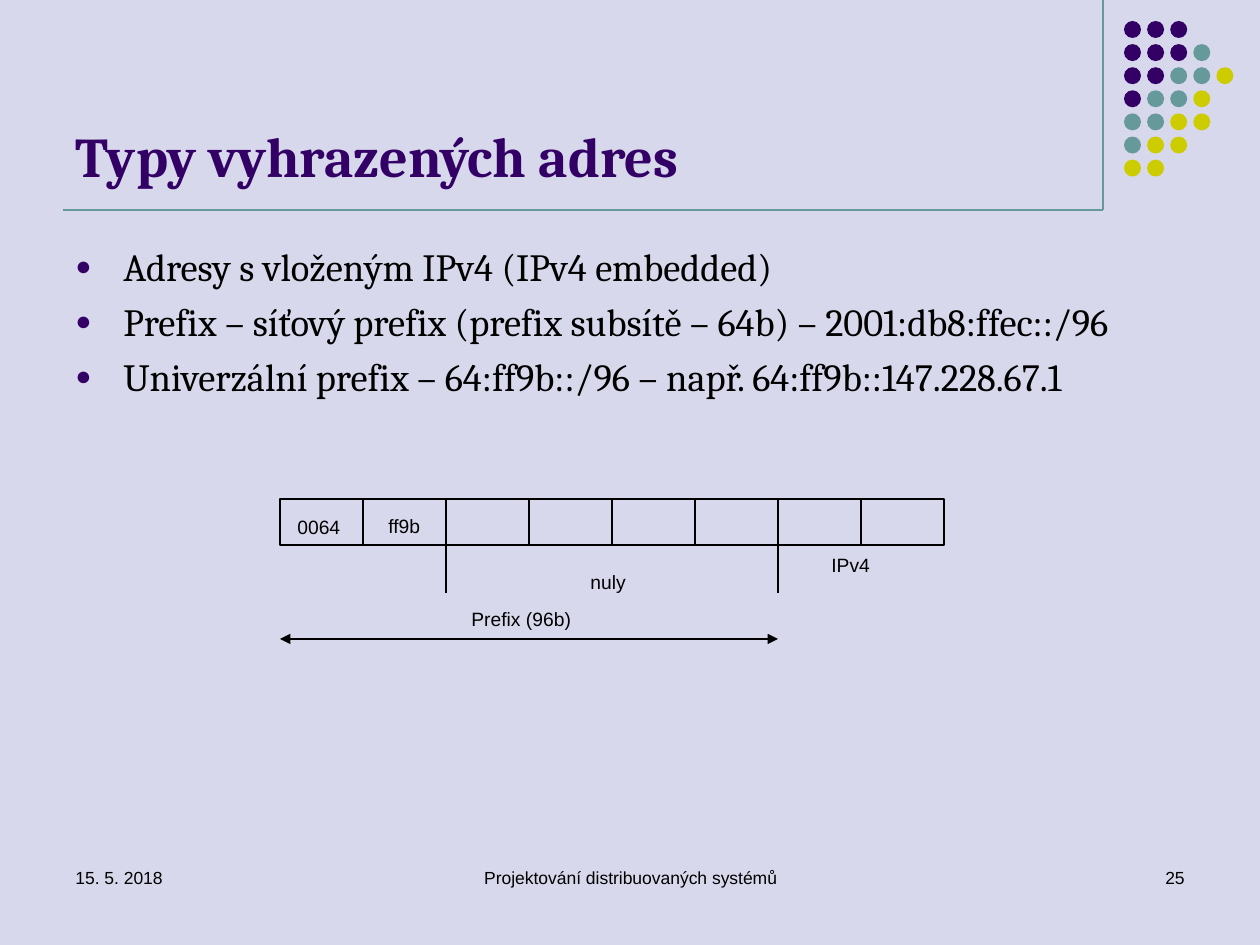
from pptx import Presentation
from pptx.dml.color import RGBColor as Rgb
from pptx.enum.shapes import MSO_CONNECTOR as Connector, MSO_SHAPE as Preset
from pptx.enum.text import MSO_ANCHOR as Anchor, PP_ALIGN as Align
from pptx.oxml import parse_xml
from pptx.oxml.ns import nsdecls
from pptx.util import Pt

EMU_PER_PX = 914400 / 126
COLORS = {
    "background": "D8D8EC",
    "purple": "330066",
    "teal": "669999",
    "yellow": "CCCC00",
    "black": "000000",
}
TITLE = {"name": "Cambria", "size": Pt(32), "bold": True}
BODY = {"name": "Cambria", "size": Pt(22)}
FOOTER = {"name": "Arial", "size": Pt(10)}
LABEL = {"name": "Arial", "size": Pt(11)}
LABEL_PARA = {"line_spacing": 1.07, "space_after": Pt(8)}


def px(value):
    return round(value * EMU_PER_PX)


def color(name):
    return Rgb.from_string(COLORS[name])


def xml(markup):
    return parse_xml(markup.replace("/>", f" {nsdecls('a')}/>", 1))


def add_text(shapes, box, lines, font, ink="black", anchor=Anchor.TOP, **para_format):
    frame = shapes.add_textbox(*map(px, box)).text_frame
    frame.word_wrap = True
    frame.vertical_anchor = anchor
    for index, line in enumerate(lines):
        para = frame.add_paragraph() if index else frame.paragraphs[0]
        for key, value in para_format.items():
            setattr(para, key, value)
        span = para.add_run()
        span.text = line
        for key, value in font.items():
            setattr(span.font, key, value)
        span.font.color.rgb = color(ink)
    return frame


def add_line(shapes, start, end, ink, width):
    line = shapes.add_connector(Connector.STRAIGHT, *map(px, start + end))
    line.line.color.rgb = color(ink)
    line.line.width = Pt(width)
    line._element.spPr.append(xml("<a:effectLst/>"))
    return line


def add_dots(page, box):
    left, top, pitch, size = box
    inks = {"P": "purple", "T": "teal", "Y": "yellow"}
    rows = ["PPP", "PPPT", "PPTTY", "PTTY", "TTYY", "TYY", "YY"]
    shapes = page.shapes.add_group_shape().shapes
    for row, codes in enumerate(rows):
        for column, code in enumerate(codes):
            corner = px(left + column * pitch), px(top + row * pitch)
            dot = shapes.add_shape(Preset.OVAL, *corner, px(size), px(size))
            dot.shadow.inherit = False
            dot.fill.solid()
            dot.fill.fore_color.rgb = color(inks[code])
            dot.line.fill.background()


def add_header(page, box):
    left, top, width, height = box
    right, bottom = left + width, top + height
    add_line(page.shapes, (right, top), (right, bottom), "teal", 0.75)
    add_dots(page, (right + 21, top + 21, 23.1, 17))
    add_line(page.shapes, (left, bottom), (right, bottom), "teal", 0.75)
    add_text(page.shapes, (left, top + 16, width, 179), ["Typy vyhrazených adres"],
             TITLE, "purple", Anchor.BOTTOM)


def add_bullets(page, box):
    lines = [
        "Adresy s\u00a0vloženým IPv4 (IPv4 embedded)".replace("\u00a0", " "),
        "Prefix – síťový prefix (prefix subsítě – 64b) – 2001:db8:ffec::/96",
        "Univerzální prefix – 64:ff9b::/96 – např. 64:ff9b::147.228.67.1",
    ]
    frame = add_text(page.shapes, box, lines, BODY, space_before=Pt(5))
    for para in frame.paragraphs:
        props = para._p.get_or_add_pPr()
        props.set("marL", str(px(48)))
        props.set("indent", str(-px(48)))
        bullet_color = parse_xml(f'<a:buClr {nsdecls("a")}>'
                                 f'<a:srgbClr val="{COLORS["purple"]}"/></a:buClr>')
        props.append(bullet_color)
        for markup in ('<a:buSzPct val="70000"/>', '<a:buFont typeface="Arial"/>',
                       '<a:buChar char="●"/>'):
            props.append(xml(markup))


def add_address_diagram(page, box):
    left, top, width, height = box
    cell_width = width / 8
    shapes = page.shapes.add_group_shape().shapes

    # Eight address fields
    cells = []
    for index in range(8):
        cell = shapes.add_shape(Preset.RECTANGLE, px(left + index * cell_width), px(top),
                                px(cell_width), px(height))
        cell.shadow.inherit = False
        cell.fill.background()
        cell.line.color.rgb = color("black")
        cell.line.width = Pt(1)
        cells.append(cell)

    # Dividers around the zero fields
    for index in (6, 2):
        x = left + index * cell_width
        divider = add_line(shapes, (x, top + height / 2), (x, top + 94), "black", 1)
        divider.begin_connect(cells[index], 1)

    # Prefix span
    arrow = add_line(shapes, (left, top + 140), (left + 6 * cell_width, top + 140),
                     "black", 1)
    outline = arrow.line._get_or_add_ln()
    for end in ("headEnd", "tailEnd"):
        outline.append(xml(f'<a:{end} type="triangle"/>'))

    # Labels
    labels = [
        ("0064", 5, 8, 86, 94),
        ("ff9b", 96, 7, 76, 94),
        ("IPv4", 539, 46, 78, 94),
        ("Prefix (96b)", 179, 101, 154, 87),
        ("nuly", 298, 63, 78, 54),
    ]
    for text, x, y, label_width, label_height in labels:
        add_text(shapes, (left + x, top + y, label_width, label_height), [text],
                 LABEL, **LABEL_PARA)


def add_footer(page, box):
    left, top, width, height = box
    parts = [
        ("15. 5. 2018", 0, 294, Align.LEFT),
        ("Projektování distribuovaných systémů", 368, 399, Align.CENTER),
        ("25", width - 294, 294, Align.RIGHT),
    ]
    for text, x, part_width, align in parts:
        add_text(page.shapes, (left + x, top, part_width, height), [text], FOOTER,
                 alignment=align)


def main():
    deck = Presentation()
    deck.slide_width, deck.slide_height = px(1260), px(945)
    page = deck.slides.add_slide(deck.slide_layouts[6])
    page.background.fill.solid()
    page.background.fill.fore_color.rgb = color("background")
    add_header(page, (63, 0, 1040, 210))
    add_bullets(page, (63, 237, 1134, 195))
    add_footer(page, (63, 861, 1134, 63))
    add_address_diagram(page, (280, 499, 664, 46))
    deck.save("out.pptx")


if __name__ == "__main__":
    main()
